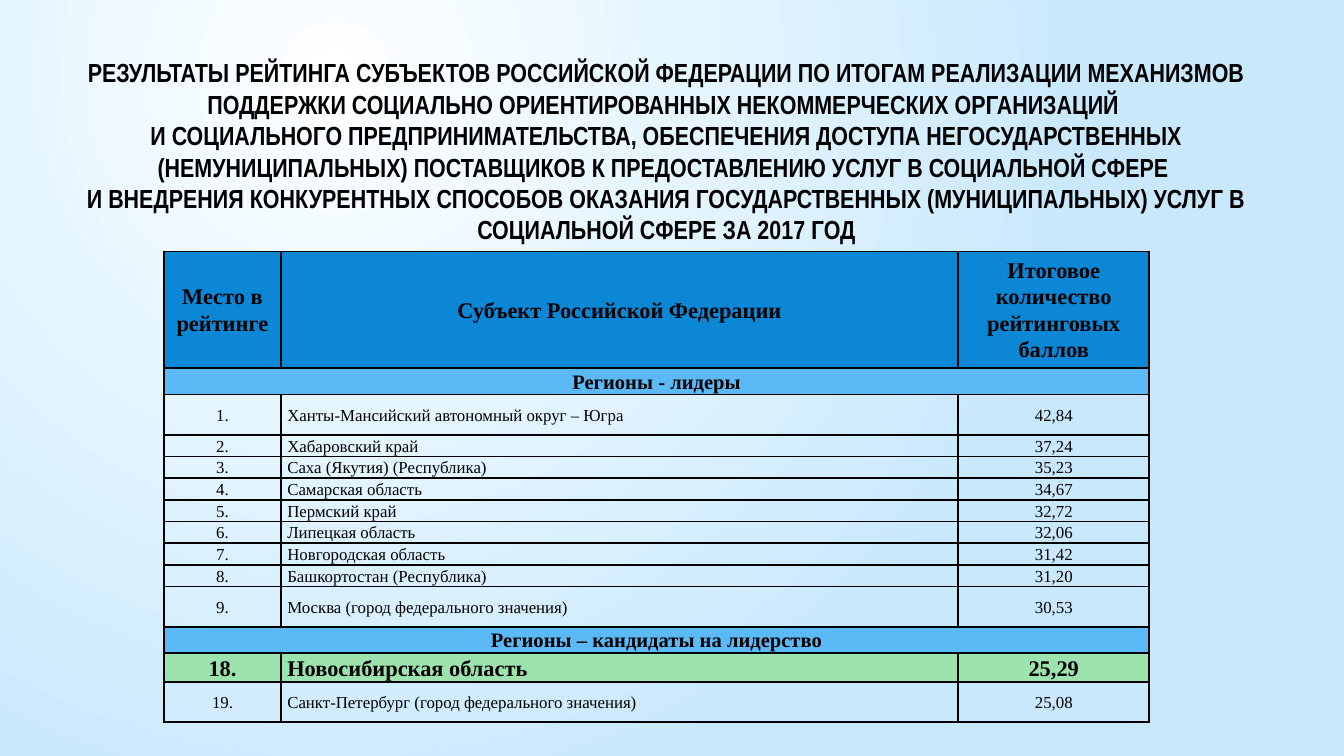
from pptx import Presentation
from pptx.dml.color import RGBColor
from pptx.enum.text import MSO_ANCHOR, PP_ALIGN
from pptx.oxml import parse_xml
from pptx.oxml.ns import nsdecls, qn
from pptx.util import Cm, Pt

LEFT, CENTER = PP_ALIGN.LEFT, PP_ALIGN.CENTER
TOP, MIDDLE = MSO_ANCHOR.TOP, MSO_ANCHOR.MIDDLE

HEAD, BAND, MARK = "0B87D6", "5BBAF6", "9DE3AE"
STOPS = [(0, "FFFFFF"), (43, "E6F6FF"), (100, "C9E8FC")]
COLS = [2.21, 12.8, 3.61]
LOW, MID, HIGH = 0.41, 0.76, 2.21

TITLE = (
    "РЕЗУЛЬТАТЫ РЕЙТИНГА СУБЪЕКТОВ РОССИЙСКОЙ ФЕДЕРАЦИИ ПО ИТОГАМ РЕАЛИЗАЦИИ "
    "МЕХАНИЗМОВ ПОДДЕРЖКИ СОЦИАЛЬНО ОРИЕНТИРОВАННЫХ НЕКОММЕРЧЕСКИХ ОРГАНИЗАЦИЙ \n"
    "И СОЦИАЛЬНОГО ПРЕДПРИНИМАТЕЛЬСТВА, ОБЕСПЕЧЕНИЯ ДОСТУПА НЕГОСУДАРСТВЕННЫХ "
    "(НЕМУНИЦИПАЛЬНЫХ) ПОСТАВЩИКОВ К ПРЕДОСТАВЛЕНИЮ УСЛУГ В СОЦИАЛЬНОЙ СФЕРЕ \n"
    "И ВНЕДРЕНИЯ КОНКУРЕНТНЫХ СПОСОБОВ ОКАЗАНИЯ ГОСУДАРСТВЕННЫХ (МУНИЦИПАЛЬНЫХ) "
    "УСЛУГ В СОЦИАЛЬНОЙ СФЕРЕ ЗА 2017 ГОД"
)

# Row kinds: height, text size, bold, fill
KINDS = {
    "head": (HIGH, 12, True, HEAD),
    "band": (LOW, 11, True, BAND),
    "tall": (MID, 9, False, None),
    "row": (LOW, 9, False, None),
    "mark": (LOW, 12, True, MARK),
}
ROWS = [
    ("head", "Место в рейтинге", "Субъект Российской Федерации",
     "Итоговое количество рейтинговых баллов"),
    ("band", "Регионы - лидеры"),
    ("tall", "1.", "Ханты-Мансийский автономный округ – Югра", "42,84"),
    ("row", "2.", "Хабаровский край", "37,24"),
    ("row", "3.", "Саха (Якутия) (Республика)", "35,23"),
    ("row", "4.", "Самарская область", "34,67"),
    ("row", "5.", "Пермский край", "32,72"),
    ("row", "6.", "Липецкая область", "32,06"),
    ("row", "7.", "Новгородская область", "31,42"),
    ("row", "8.", "Башкортостан (Республика)", "31,20"),
    ("tall", "9.", "Москва (город федерального значения)", "30,53"),
    ("band", "Регионы – кандидаты на лидерство"),
    ("mark", "18.", "Новосибирская область", "25,29"),
    ("tall", "19.", "Санкт-Петербург (город федерального значения)", "25,08"),
]


def color(code):
    return RGBColor.from_string(code)


def write(frame, text, size=9, bold=False, font="Times New Roman",
          align=CENTER, space=1.07):
    par = frame.paragraphs[0]
    par.text = text
    par.alignment = align
    par.line_spacing = space
    for run in par.runs:
        run.font.name = font
        run.font.size = Pt(size)
        run.font.bold = bold
        run.font.color.rgb = color("000000")


class Page:
    """Hold the current slide and the line style of its table."""

    line = ("000000", 1)

    def __init__(self, deck):
        self.slide = deck.slides.add_slide(deck.slide_layouts[6])

    def glow(self, stops, left, top):
        """Fill the background with a circular gradient."""
        fill = self.slide.background.fill
        fill.gradient()
        old = self.slide.element.find(".//" + qn("a:gradFill"))
        marks = "".join(
            f'<a:gs pos="{pos * 1000}"><a:srgbClr val="{code}"/></a:gs>'
            for pos, code in stops)
        new = parse_xml(
            f'<a:gradFill {nsdecls("a")} rotWithShape="1"><a:gsLst>{marks}</a:gsLst>'
            f'<a:path path="circle"><a:fillToRect l="{left * 1000}" t="{top * 1000}" '
            'r="100000" b="100000"/></a:path></a:gradFill>')
        old.getparent().replace(old, new)

    def title(self, text, x, y, w, h):
        box = self.slide.shapes.add_textbox(Cm(x), Cm(y), Cm(w), Cm(h))
        frame = box.text_frame
        frame.word_wrap = True
        frame.vertical_anchor = TOP
        write(frame, text, size=14, bold=True, font="Arial Narrow", space=1.0)

    def border(self, cell):
        code, width = self.line
        props = cell._tc.get_or_add_tcPr()
        for spot, side in enumerate("LRTB"):
            props.insert(spot, parse_xml(
                f'<a:ln{side} {nsdecls("a")} w="{Pt(width)}"><a:solidFill>'
                f'<a:srgbClr val="{code}"/></a:solidFill></a:ln{side}>'))

    def cell(self, cell, fill):
        cell.vertical_anchor = MIDDLE
        cell.margin_left = cell.margin_right = Cm(0.12)
        cell.margin_top = cell.margin_bottom = Cm(0)
        if fill:
            cell.fill.solid()
            cell.fill.fore_color.rgb = color(fill)
        else:
            cell.fill.background()
        self.border(cell)

    def table(self, rows, x, y):
        high = sum(KINDS[row[0]][0] for row in rows)
        grid = self.slide.shapes.add_table(
            len(rows), len(COLS), Cm(x), Cm(y), Cm(sum(COLS)), Cm(high)).table
        for col, width in zip(grid.columns, COLS):
            col.width = Cm(width)
        for r, (kind, *texts) in enumerate(rows):
            tall, size, bold, fill = KINDS[kind]
            grid.rows[r].height = Cm(tall)
            for c in range(len(COLS)):
                self.cell(grid.cell(r, c), fill)
            if kind == "band":
                grid.cell(r, 0).merge(grid.cell(r, len(COLS) - 1))
            for c, text in enumerate(texts):
                align = LEFT if c == 1 and kind != "head" else CENTER
                write(grid.cell(r, c).text_frame, text, size, bold, align=align)


def main():
    deck = Presentation()
    deck.slide_width, deck.slide_height = Cm(25.4), Cm(14.29)
    page = Page(deck)
    page.glow(STOPS, 50, 20)
    page.title(TITLE, 0.5, 0.95, 24.2, 2.65)
    page.table(ROWS, 3.1, 4.75)
    deck.save("out.pptx")


if __name__ == "__main__":
    main()
